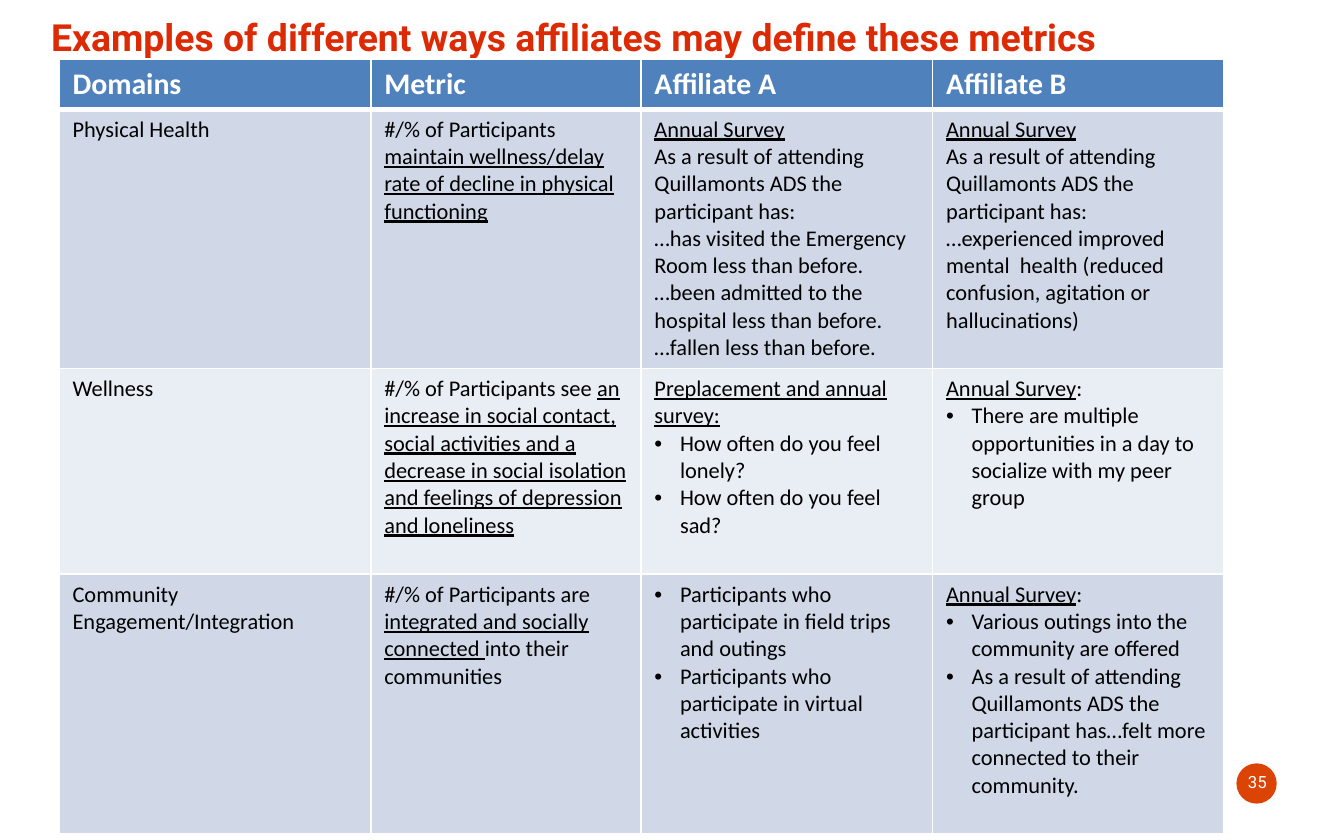
from lxml.etree import SubElement
from pptx import Presentation
from pptx.dml.color import RGBColor
from pptx.enum.shapes import MSO_SHAPE
from pptx.enum.text import MSO_ANCHOR, MSO_AUTO_SIZE, PP_ALIGN
from pptx.oxml import parse_xml
from pptx.oxml.ns import nsdecls, qn
from pptx.util import Inches, Pt

RED = RGBColor(0xDC, 0x2A, 0x05)
ORANGE = RGBColor(0xDC, 0x44, 0x05)
BLUE = RGBColor(0x4F, 0x81, 0xBD)
BANDS = RGBColor(0xD0, 0xD8, 0xE8), RGBColor(0xE9, 0xED, 0xF4)
WHITE = RGBColor(0xFF, 0xFF, 0xFF)
BLACK = RGBColor(0, 0, 0)

# The grid: 100 columns by 62.5 rows of square cells
WIDTH, HEIGHT = Inches(10), Inches(6.25)
COL, ROW = WIDTH / 100, HEIGHT / 62.5

HEADERS = ["Domains", "Metric", "Affiliate A", "Affiliate B"]
COL_WIDTHS = [23.2, 20.1, 21.7, 21.7]
ROW_HEIGHTS = [3.6, 19.3, 15.3, 19.3]
RESULT = "As a result of attending Quillamonts ADS the participant has"

# One paragraph per line; _underlined_; a leading "•" makes a bullet
BODY = [
    ["Physical Health",
     "#/% of Participants _maintain wellness/delay rate of decline in "
     "physical functioning_",
     f"_Annual Survey_\n{RESULT}:\n"
     "…has visited the Emergency Room less than before.\n"
     "…been admitted to the hospital less than before.\n"
     "…fallen less than before.",
     f"_Annual Survey_\n{RESULT}:\n"
     "…experienced improved mental  health (reduced confusion, agitation "
     "or hallucinations)"],
    ["Wellness",
     "#/% of Participants see _an increase in social contact, social "
     "activities and a decrease in social isolation and feelings of "
     "depression and loneliness_",
     "_Preplacement and annual survey:_\n"
     "•How often do you feel lonely?\n•How often do you feel sad?",
     "_Annual Survey_:\n•There are multiple opportunities in a day to "
     "socialize with my peer group"],
    ["Community Engagement/Integration",
     "#/% of Participants are _integrated and socially connected _into "
     "their communities",
     "•Participants who participate in field trips and outings\n"
     "•Participants who participate in virtual activities",
     "_Annual Survey_:\n•Various outings into the community are offered\n"
     f"•{RESULT}…felt more connected to their community."],
]


def write(tf, text, size, font="Calibri", color=BLACK, bold=False,
          align=PP_ALIGN.LEFT):
    for i, line in enumerate(text.split("\n")):
        p = tf.add_paragraph() if i else tf.paragraphs[0]
        p.alignment = align
        if line.startswith("•"):
            pPr = p._p.get_or_add_pPr()
            pPr.set("marL", str(Inches(0.19)))
            pPr.set("indent", str(-Inches(0.19)))
            SubElement(pPr, qn("a:buFont")).set("typeface", "Arial")
            SubElement(pPr, qn("a:buChar")).set("char", "•")
        for j, part in enumerate(line.removeprefix("•").split("_")):
            if part:
                r = p.add_run()
                r.text = part
                r.font.name, r.font.size, r.font.bold = font, Pt(size), bold
                r.font.color.rgb = color
                r.font.underline = j % 2 == 1


class Deck:
    """Holds the style and the current slide."""

    def __init__(self):
        self.prs = Presentation()
        self.prs.slide_width, self.prs.slide_height = WIDTH, HEIGHT
        self.s = self.prs.slides.add_slide(self.prs.slide_layouts[5])

    def box(self, x, y, w, h):
        return round(x * COL), round(y * ROW), round(w * COL), round(h * ROW)

    def title(self, text, *area):
        sp = self.s.shapes.title
        sp.left, sp.top, sp.width, sp.height = self.box(*area)
        tf = sp.text_frame
        tf.auto_size = MSO_AUTO_SIZE.NONE
        tf.vertical_anchor = MSO_ANCHOR.MIDDLE
        write(tf, text, 20, font="Roboto", color=RED, bold=True)

    def disc(self, *area):
        sp = self.s.shapes.add_shape(MSO_SHAPE.OVAL, *self.box(*area))
        sp.shadow.inherit = False
        sp.fill.solid()
        sp.fill.fore_color.rgb = ORANGE
        sp.line.fill.background()

    def label(self, text, *area):
        tf = self.s.shapes.add_textbox(*self.box(*area)).text_frame
        tf.word_wrap = True
        tf.vertical_anchor = MSO_ANCHOR.MIDDLE
        write(tf, text, 9, font="Roboto", color=WHITE, align=PP_ALIGN.CENTER)

    def cell(self, cell, text, fill, top=1, bottom=1, **style):
        write(cell.text_frame, text, **style)
        cell.fill.solid()
        cell.fill.fore_color.rgb = fill
        tcPr = cell._tc.get_or_add_tcPr()
        sides = {"L": 1, "R": 1, "T": top, "B": bottom}
        for i, (side, width) in enumerate(sides.items()):
            tcPr.insert(i, parse_xml(
                f'<a:ln{side} {nsdecls("a")} w="{Pt(width)}"><a:solidFill>'
                f'<a:srgbClr val="{WHITE}"/></a:solidFill></a:ln{side}>'))

    def table(self, x, y):
        area = self.box(x, y, sum(COL_WIDTHS), sum(ROW_HEIGHTS))
        table = self.s.shapes.add_table(
            len(ROW_HEIGHTS), len(COL_WIDTHS), *area).table
        for column, width in zip(table.columns, COL_WIDTHS):
            column.width = round(width * COL)
        for row, height in zip(table.rows, ROW_HEIGHTS):
            row.height = round(height * ROW)
        # Header row with a thick rule under it
        for c, text in enumerate(HEADERS):
            self.cell(table.cell(0, c), text, BLUE, bottom=3,
                      size=16, color=WHITE, bold=True)
        # Banded body rows
        for r, texts in enumerate(BODY, 1):
            for c, text in enumerate(texts):
                self.cell(table.cell(r, c), text, BANDS[(r - 1) % 2],
                          top=3 if r == 1 else 1, size=12)


def main():
    deck = Deck()
    deck.title("Examples of different ways affiliates may define these metrics",
               2.8, -0.2, 90, 5.8)
    deck.table(4.4, 4.4)
    # Page number
    deck.disc(92, 56.8, 3, 3)
    deck.label("35", 90.6, 56.5, 5.9, 3.3)
    deck.prs.save("out.pptx")


if __name__ == "__main__":
    main()
